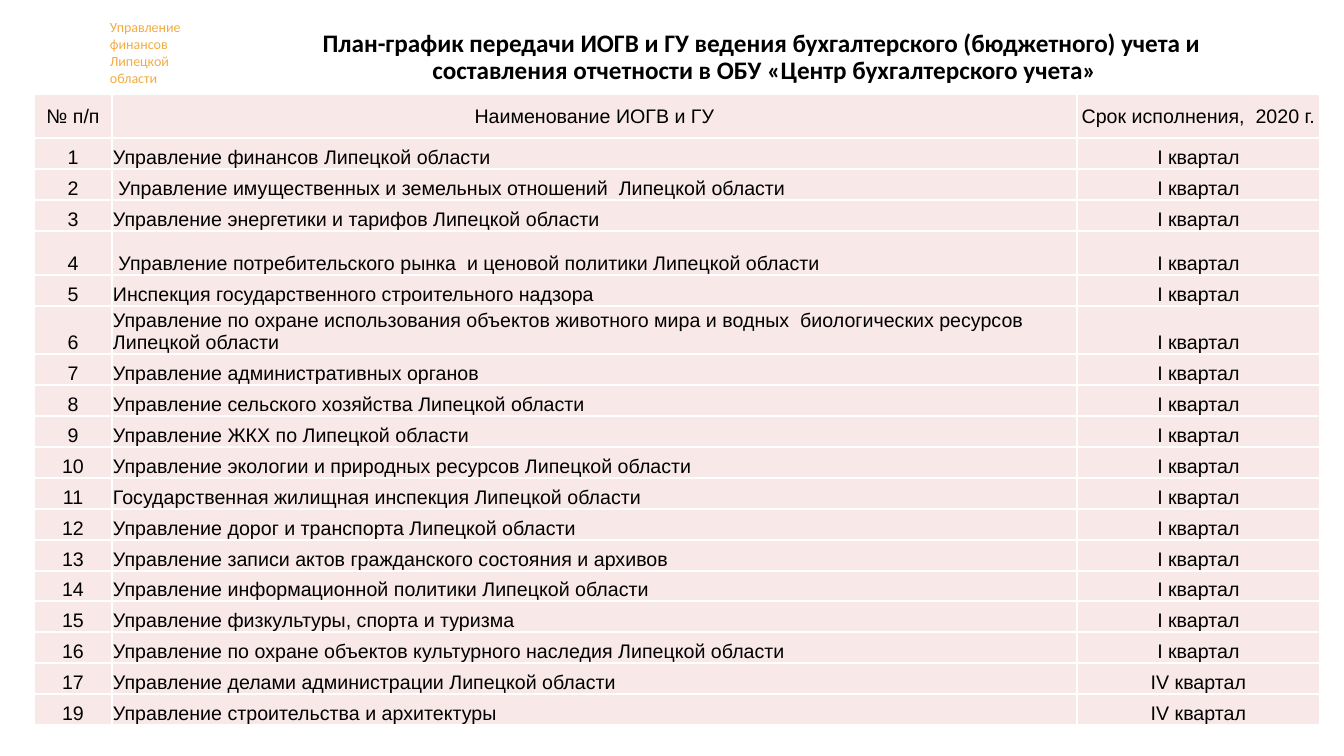
from lxml.etree import SubElement
from pptx import Presentation
from pptx.dml.color import RGBColor
from pptx.enum.text import MSO_ANCHOR as Anchor, PP_ALIGN as Align
from pptx.oxml.ns import qn
from pptx.util import Pt

PX = 914400 / 100.8
COLORS = {"label": "F2AC44", "text": "000000", "cell": "F8E8E8", "border": "FFFFFF"}
HEADERS = ["№ п/п", "Наименование ИОГВ и ГУ", "Срок исполнения,  2020 г."]
FIRST_QUARTER = [
    "Управление финансов Липецкой области",
    " Управление имущественных и земельных отношений  Липецкой области",
    "Управление энергетики и тарифов Липецкой области",
    " Управление потребительского рынка  и ценовой политики Липецкой области",
    "Инспекция государственного строительного надзора",
    "Управление по охране использования объектов животного мира и водных  "
    "биологических ресурсов Липецкой области",
    "Управление административных органов",
    "Управление сельского хозяйства Липецкой области",
    "Управление ЖКХ по Липецкой области",
    "Управление экологии и природных ресурсов Липецкой области",
    "Государственная жилищная инспекция Липецкой области",
    "Управление дорог и транспорта Липецкой области",
    "Управление записи актов гражданского состояния и архивов",
    "Управление информационной политики Липецкой области",
    "Управление физкультуры, спорта и туризма",
    "Управление по охране объектов культурного наследия Липецкой области",
]
FOURTH_QUARTER = [
    ("17", "Управление делами администрации Липецкой области"),
    ("19", "Управление строительства и архитектуры"),
]
COLUMN_WIDTHS = [78, 965, 243]
ROW_HEIGHT = 31
SPECIAL_HEIGHTS = {0: 44, 4: 44, 6: 46, 14: 30}


def px(length):
    return round(length * PX)


def write(para, text, font, size, color, align=Align.LEFT, bold=False):
    para.text = text
    para.alignment = align
    para.font.name = font
    para.font.size = Pt(size)
    para.font.bold = bold
    para.font.color.rgb = RGBColor.from_string(COLORS[color])


def add_text(page, area, text, size, color, anchor=Anchor.TOP, **style):
    box = page.shapes.add_textbox(*map(px, area))
    frame = box.text_frame
    frame.word_wrap = True
    frame.vertical_anchor = anchor
    write(frame.paragraphs[0], text, "Calibri", size, color, **style)
    return box


def add_borders(cell):
    properties = cell._tc.get_or_add_tcPr()
    for position, side in enumerate(("lnL", "lnR", "lnT", "lnB")):
        line = SubElement(properties, qn(f"a:{side}"), w=str(Pt(1)))
        fill = SubElement(line, qn("a:solidFill"))
        SubElement(fill, qn("a:srgbClr"), val=COLORS["border"])
        properties.insert(position, line)


def fill_cell(cell, text, align, anchor):
    cell.margin_left = cell.margin_right = cell.margin_top = px(1)
    cell.margin_bottom = 0
    cell.vertical_anchor = anchor
    cell.fill.solid()
    cell.fill.fore_color.rgb = RGBColor.from_string(COLORS["cell"])
    add_borders(cell)
    write(cell.text_frame.paragraphs[0], text, "Arial", 14, "text", align)


def add_schedule(page, left, top, rows):
    heights = [SPECIAL_HEIGHTS.get(index, ROW_HEIGHT) for index in range(len(rows))]
    table = page.shapes.add_table(
        len(rows), len(COLUMN_WIDTHS), px(left), px(top),
        px(sum(COLUMN_WIDTHS)), px(sum(heights)),
    ).table
    for column, width in zip(table.columns, COLUMN_WIDTHS):
        column.width = px(width)
    for row_index, (values, height) in enumerate(zip(rows, heights)):
        table.rows[row_index].height = px(height)
        anchor = Anchor.BOTTOM if row_index else Anchor.MIDDLE
        for column_index, text in enumerate(values):
            is_name = row_index > 0 and column_index == 1
            align = Align.LEFT if is_name else Align.CENTER
            fill_cell(table.cell(row_index, column_index), text, align, anchor)


def main():
    deck = Presentation()
    deck.slide_width, deck.slide_height = px(1344), px(756)
    page = deck.slides.add_slide(deck.slide_layouts[6])
    add_text(page, (100, 14, 98, 78), "Управление финансов Липецкой области", 10, "label")
    title = add_text(
        page, (212, 25, 1105, 65),
        "План-график передачи ИОГВ и ГУ ведения бухгалтерского (бюджетного) учета и \v"
        "составления отчетности в ОБУ «Центр бухгалтерского учета»",
        18, "text", Anchor.MIDDLE, align=Align.CENTER, bold=True,
    )
    title.text_frame.paragraphs[0].line_spacing = 0.9
    rows = [HEADERS]
    rows += [(str(number), name, "I квартал") for number, name in enumerate(FIRST_QUARTER, 1)]
    rows += [(number, name, "IV квартал") for number, name in FOURTH_QUARTER]
    add_schedule(page, 34, 94, rows)
    deck.save("out.pptx")


if __name__ == "__main__":
    main()
